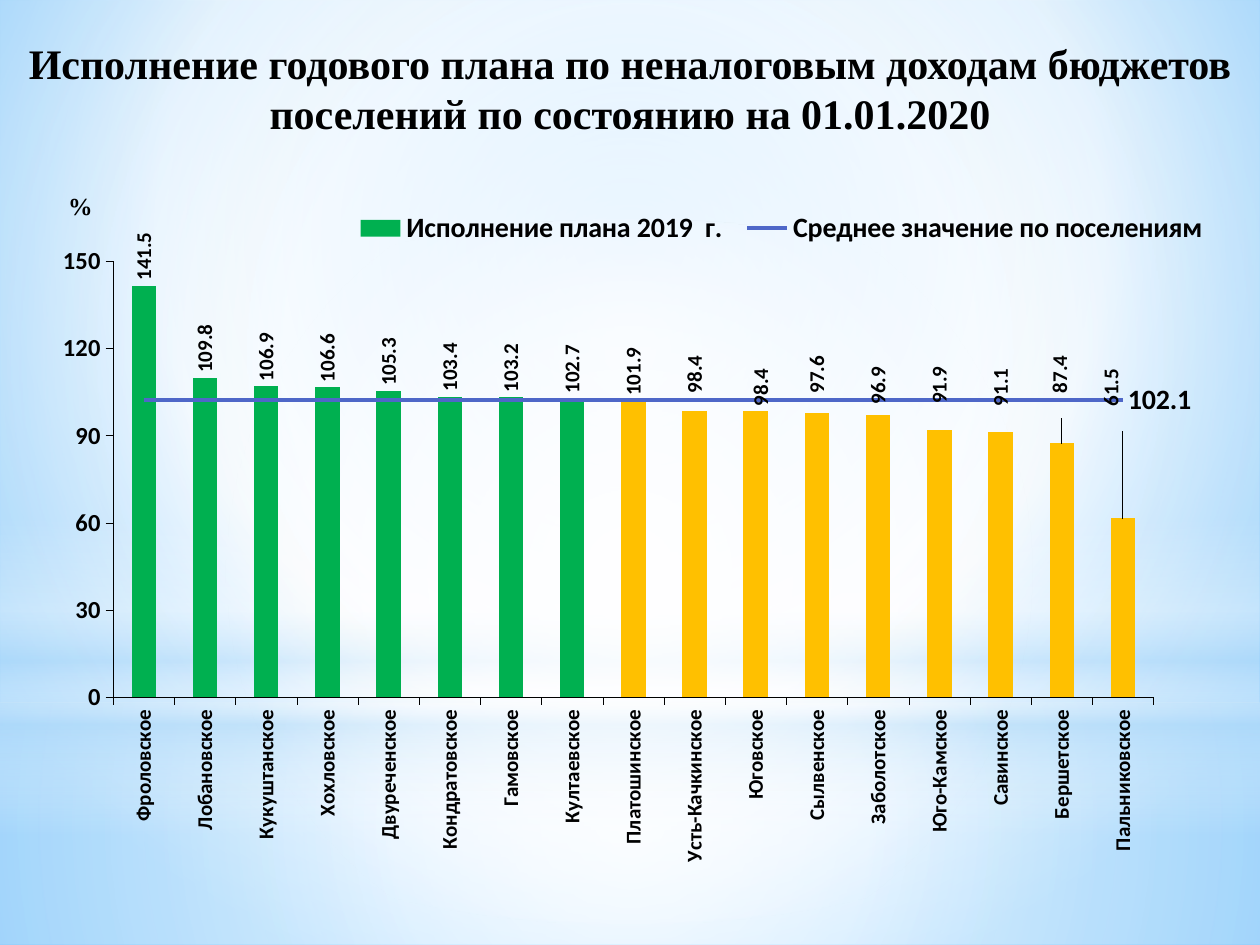
"""Build a slide comparing non-tax revenue plan execution across settlements."""
import pptx
import pptx.chart.data
import pptx.dml.color
import pptx.enum.chart
import pptx.enum.shapes
import pptx.enum.text
import pptx.oxml
import pptx.oxml.ns
import pptx.util

COLORS = {
    "black": "000000", "white": "FFFFFF", "sky": "9ED5FF", "azure": "5BB9FF",
    "haze": "B4DCFA", "above": "00B050", "below": "FFC000", "average": "4E67C8",
}
EXECUTION = {
    "Фроловское": 141.5, "Лобановское": 109.8, "Кукуштанское": 106.9,
    "Хохловское": 106.6, "Двуреченское": 105.3, "Кондратовское": 103.4,
    "Гамовское": 103.2, "Култаевское": 102.7, "Платошинское": 101.9,
    "Усть-Качкинское": 98.4, "Юговское": 98.4, "Сылвенское": 97.6,
    "Заболотское": 96.9, "Юго-Камское": 91.9, "Савинское": 91.1,
    "Бершетское": 87.4, "Пальниковское": 61.5,
}
AVERAGE = 102.1
LABEL_SHIFTS = {
    "Усть-Качкинское": (0, -13), "Юговское": (5, 0), "Сылвенское": (0, -15),
    "Заболотское": (0, -6), "Юго-Камское": (0, -21), "Савинское": (0, -21),
    "Бершетское": (-2, -45), "Пальниковское": (-12, -107),
}
CENTER = (50, 50, 50, 50)


def px(length):
    return round(length * 914400 / 126)


def xml(markup):
    namespaces = pptx.oxml.ns.nsdecls("a", "c")
    return pptx.oxml.parse_xml(f"<c:root {namespaces}>{markup}</c:root>")[0]


def manual_layout(**parts):
    values = "".join(f'<c:{key} val="{value}"/>' for key, value in parts.items())
    return xml(f"<c:layout><c:manualLayout>{values}</c:manualLayout></c:layout>")


class SlideStyle:
    """Holds the style and the current slide."""

    serif, sans = "Times New Roman", "Calibri"

    def __init__(self, slide):
        self.slide = slide

    def color(self, name):
        return pptx.dml.color.RGBColor.from_string(COLORS[name])

    def font(self, font, size, face):
        font.size, font.name, font.bold = pptx.util.Pt(size), face, True
        font.color.rgb = self.color("black")

    def gradient(self, solid, stops, focus=None):
        marks = "".join(
            f'<a:gs pos="{pos * 1000}"><a:srgbClr val="{COLORS[name]}">'
            f'<a:alpha val="{alpha * 1000}"/></a:srgbClr></a:gs>'
            for pos, name, alpha in stops)
        shade = '<a:lin ang="5400000" scaled="0"/>'
        if focus:
            sides = " ".join(f'{side}="{value * 1000}"' for side, value in zip("ltrb", focus))
            shade = f'<a:path path="circle"><a:fillToRect {sides}/></a:path>'
        solid.getparent().replace(
            solid, xml(f"<a:gradFill><a:gsLst>{marks}</a:gsLst>{shade}</a:gradFill>"))

    def background(self, stops, focus):
        self.slide.background.fill.solid()
        self.slide.background.fill.fore_color.rgb = self.color("white")
        self.gradient(self.slide.element.xpath(".//p:bgPr/a:solidFill")[0], stops, focus)

    def glow(self, kind, top, height, stops, focus=None):
        glow = self.slide.shapes.add_shape(kind, 0, px(top), px(1260), px(height))
        glow.shadow.inherit = False
        glow.line.fill.background()
        glow.fill.solid()
        glow.fill.fore_color.rgb = self.color("white")
        self.gradient(glow.element.xpath("./p:spPr/a:solidFill")[0], stops, focus)

    def title(self, text, left, top, width, height):
        title = self.slide.shapes.title
        title.element.getparent().append(title.element)
        title.left, title.top, title.width, title.height = map(px, (left, top, width, height))
        frame = title.text_frame
        frame.text = text
        frame.word_wrap = True
        frame.auto_size = pptx.enum.text.MSO_AUTO_SIZE.NONE
        frame.vertical_anchor = pptx.enum.text.MSO_ANCHOR.TOP
        frame.margin_top = px(11)
        frame.paragraphs[0].alignment = pptx.enum.text.PP_ALIGN.CENTER
        self.font(frame.paragraphs[0].font, 24, self.serif)

    def unit(self, text, left, top, width, height):
        frame = self.slide.shapes.add_textbox(*map(px, (left, top, width, height))).text_frame
        frame.text = text
        frame.word_wrap = True
        frame.margin_left = px(43)
        self.font(frame.paragraphs[0].font, 14, self.serif)

    def axis(self, axis, size):
        axis.has_major_gridlines = False
        axis.major_tick_mark = pptx.enum.chart.XL_TICK_MARK.OUTSIDE
        axis.minor_tick_mark = pptx.enum.chart.XL_TICK_MARK.NONE
        axis.format.line.color.rgb = self.color("black")
        axis.format.line.width = pptx.util.Pt(0.25)
        self.font(axis.tick_labels.font, size, self.sans)

    def bars(self, series, width, height, root):
        outside = pptx.enum.chart.XL_LABEL_POSITION.OUTSIDE_END
        series.format.fill.solid()
        series.format.fill.fore_color.rgb = self.color("above")
        labels = series.data_labels
        labels.show_value = True
        labels.number_format, labels.number_format_is_linked = "#,##0.0", False
        labels.position = outside
        self.font(labels.font, 12, self.sans)
        for index, (settlement, value) in enumerate(EXECUTION.items()):
            if value < AVERAGE:
                fill = series.points[index].format.fill
                fill.solid()
                fill.fore_color.rgb = self.color("below")
            if settlement in LABEL_SHIFTS:
                label = series.points[index].data_label
                self.font(label.font, 12, self.sans)
                label.position = outside
                right, down = LABEL_SHIFTS[settlement]
                mark = root.xpath(f'.//c:barChart//c:dLbl/c:idx[@val="{index}"]')[0]
                mark.addnext(manual_layout(x=round(right / width, 4), y=round(down / height, 4)))

    def average_line(self, chart):
        bar_plot = chart.element.xpath(".//c:barChart")[0]
        average = bar_plot.xpath("./c:ser")[1]
        for invert in average.xpath("./c:invertIfNegative"):
            average.remove(invert)
        line_plot = xml('<c:lineChart><c:grouping val="standard"/><c:varyColors val="0"/>'
                        '<c:marker val="1"/></c:lineChart>')
        line_plot.insert(2, average)
        for axis_id in bar_plot.xpath("./c:axId"):
            line_plot.append(xml(f'<c:axId val="{axis_id.get("val")}"/>'))
        bar_plot.addnext(line_plot)
        series = chart.plots[1].series[0]
        series.smooth = False
        series.marker.style = pptx.enum.chart.XL_MARKER_STYLE.NONE
        series.format.line.color.rgb = self.color("average")
        series.format.line.width = pptx.util.Pt(2.25)
        series.data_labels.show_value = False
        last = series.points[len(EXECUTION) - 1].data_label
        self.font(last.font, 16, self.sans)
        last.position = pptx.enum.chart.XL_LABEL_POSITION.RIGHT

    def chart(self, left, top, width, height):
        data = pptx.chart.data.CategoryChartData(number_format="0.0")
        data.categories = list(EXECUTION)
        data.add_series("Исполнение плана 2019  г.", list(EXECUTION.values()))
        data.add_series("Среднее значение по поселениям", [AVERAGE] * len(EXECUTION))
        chart = self.slide.shapes.add_chart(
            pptx.enum.chart.XL_CHART_TYPE.COLUMN_CLUSTERED,
            *map(px, (left, top, width, height)), data).chart
        self.font(chart.font, 18, self.sans)
        chart.has_title = False
        chart.plots[0].gap_width = 150
        chart.plots[0].vary_by_categories = False
        self.average_line(chart)
        self.bars(chart.plots[0].series[0], width, height, chart.element)
        self.axis(chart.category_axis, 12)
        chart.category_axis.tick_label_position = pptx.enum.chart.XL_TICK_LABEL_POSITION.LOW
        scale = chart.value_axis
        self.axis(scale, 14)
        scale.minimum_scale, scale.maximum_scale, scale.major_unit = 0, 150, 30
        scale.tick_labels.number_format = "0"
        scale.tick_labels.number_format_is_linked = False
        chart.has_legend = True
        chart.legend.position = pptx.enum.chart.XL_LEGEND_POSITION.BOTTOM
        chart.legend.include_in_layout = False
        self.font(chart.legend.font, 16, self.sans)
        root = chart.element
        for body in root.xpath(".//c:barChart//c:dLbls//a:bodyPr | .//c:catAx//a:bodyPr"):
            body.set("rot", "-5400000")
            body.set("vert", "horz")
        for layout in root.xpath(".//c:plotArea/c:layout | .//c:legend/c:layout"):
            layout.getparent().remove(layout)
        root.xpath(".//c:plotArea")[0].insert(0, manual_layout(
            layoutTarget="inner", xMode="edge", yMode="edge", x=0.062, y=0.102, w=0.87, h=0.586))
        root.xpath(".//c:legendPos")[0].addnext(manual_layout(
            xMode="edge", yMode="edge", x=0.256, y=0.033, w=0.73, h=0.05))


def main():
    deck = pptx.Presentation()
    deck.slide_width, deck.slide_height = px(1260), px(945)
    style = SlideStyle(deck.slides.add_slide(deck.slide_layouts[5]))
    rectangle = pptx.enum.shapes.MSO_SHAPE.RECTANGLE
    oval = pptx.enum.shapes.MSO_SHAPE.OVAL
    style.background([(0, "sky", 100), (60, "white", 100), (100, "azure", 100)], (20, 10, 20, 60))
    style.glow(rectangle, 703, 242, [(0, "white", 91), (37, "white", 76), (100, "haze", 79)], CENTER)
    style.glow(rectangle, 0, 703, [(0, "white", 89), (48, "white", 62), (100, "haze", 79)], CENTER)
    style.glow(rectangle, 519, 315, [
        (0, "white", 0), (29, "white", 30), (45, "haze", 40),
        (55, "white", 26), (65, "haze", 60), (100, "white", 0)])
    style.glow(oval, 220, 703, [(0, "white", 100), (56, "white", 0)], CENTER)
    style.title("Исполнение годового плана по неналоговым доходам бюджетов "
                "поселений по состоянию на 01.01.2020", 0, 26, 1260, 68)
    style.chart(39, 185, 1196, 745)
    style.unit("%", 25, 185, 118, 43)
    deck.save("out.pptx")


if __name__ == "__main__":
    main()
